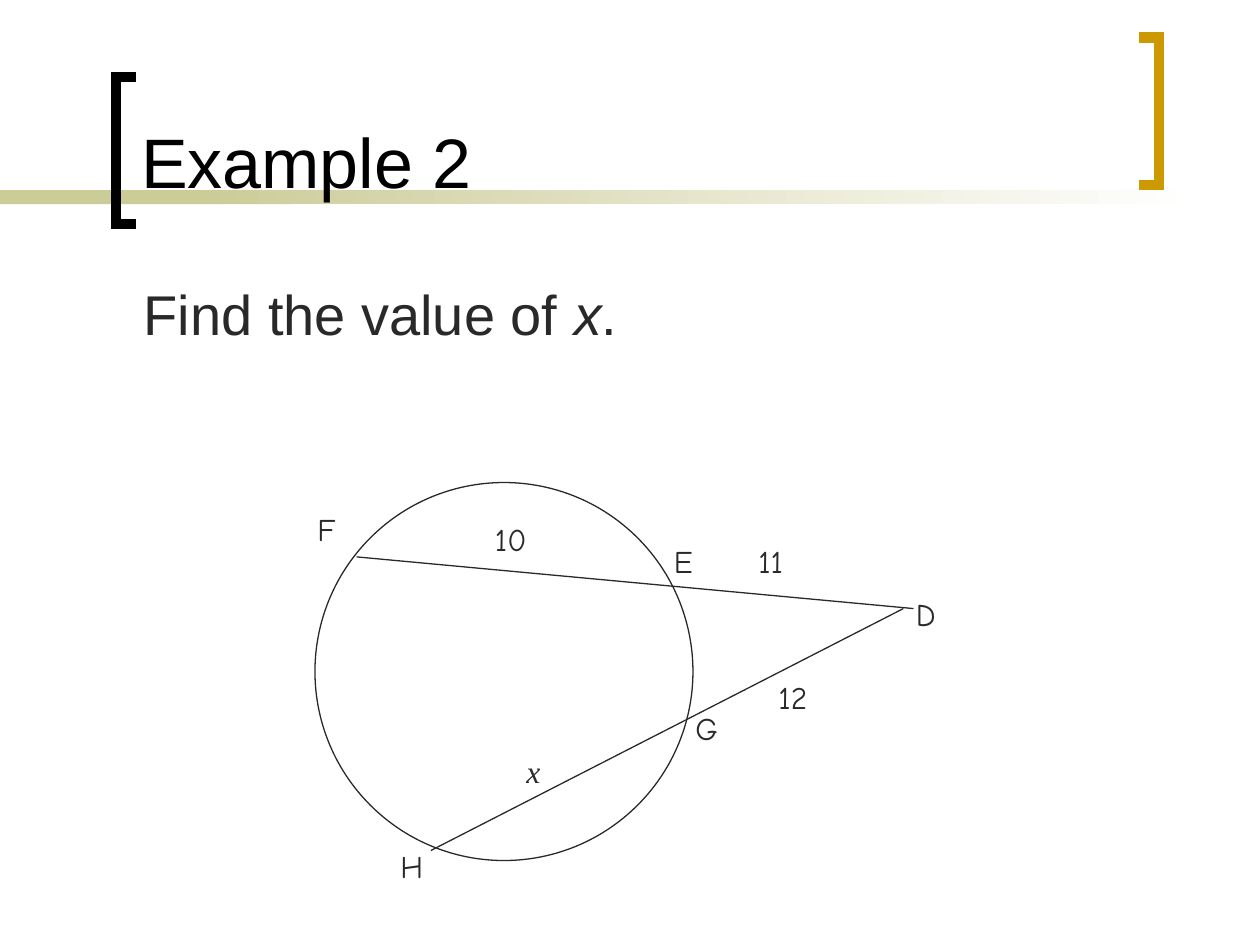
from dataclasses import dataclass

from lxml import etree
from pptx import Presentation
from pptx.dml.color import RGBColor
from pptx.enum import shapes, text
from pptx.oxml import ns
from pptx.util import Inches, Pt


@dataclass(frozen=True)
class Theme:
    ink: RGBColor = RGBColor.from_string("292929")
    black: RGBColor = RGBColor.from_string("000000")
    white: RGBColor = RGBColor.from_string("FFFFFF")
    sage: RGBColor = RGBColor.from_string("CCCC99")
    gold: RGBColor = RGBColor.from_string("CC9900")
    font: str = "Arial"
    label_font: str = "Comic Neue"
    math_font: str = "Times New Roman"
    title_size: int = 40
    body_size: int = 32
    label_size: int = 18
    thin: float = 0.75
    thick: float = 6


THEME = Theme()
BAND_TOP, BAND_HEIGHT = 1.51, 0.11
BRACKET_WIDTH, BRACKET_HEIGHT = 0.16, 1.17
LABEL_WIDTH, LABEL_HEIGHT = 0.67, 0.4

LABELS = [
    ("E", 5.25, 4.25), ("F", 2.42, 4), ("G", 5.42, 5.58),
    ("D", 7.17, 4.67), ("H", 3.08, 6.67),
    ("10", 3.83, 4.08), ("11", 5.92, 4.25), ("12", 6.08, 5.33),
]
SECANTS = [((7.25, 4.83), (2.83, 4.42)), ((3.42, 6.75), (7.17, 4.83))]


def set_all(target, values):
    for name, value in values.items():
        setattr(target, name, value)


def inches(*lengths):
    return [Inches(length) for length in lengths]


def place(shape, left, top, width, height):
    set_all(shape, dict(zip(("left", "top", "width", "height"),
                            inches(left, top, width, height))))


def add_span(para, words, size, color, font=THEME.font, italic=False):
    span = para.add_run()
    span.text = words
    set_all(span.font, {"name": font, "size": Pt(size), "italic": italic})
    span.font.color.rgb = color


def set_line(shape, color, width):
    shape.line.color.rgb = color
    shape.line.width = Pt(width)


def add_band(page, left, width, fade=False):
    band = page.shapes.add_shape(shapes.MSO_SHAPE.RECTANGLE,
                                 *inches(left, BAND_TOP, width, BAND_HEIGHT))
    band.shadow.inherit = False
    band.line.fill.background()
    if fade:
        band.fill.gradient()
        band.fill.gradient_angle = 0
        for stop, color in zip(band.fill.gradient_stops, (THEME.sage, THEME.white)):
            stop.color.rgb = color
    else:
        band.fill.solid()
        band.fill.fore_color.rgb = THEME.sage


def add_bracket(page, spine, tip, top, color):
    """Draw a square bracket with its upright at spine and its ends at tip."""
    bottom = top + BRACKET_HEIGHT
    builder = page.shapes.build_freeform(*inches(tip, top), scale=1.0)
    corners = [(spine, top), (spine, bottom), (tip, bottom)]
    builder.add_line_segments([inches(*corner) for corner in corners], close=False)
    bracket = builder.convert_to_shape()
    bracket.shadow.inherit = False
    bracket.fill.background()
    set_line(bracket, color, THEME.thick)
    miter = etree.SubElement(bracket.line._get_or_add_ln(), ns.qn("a:miter"))
    miter.set("lim", "800000")


def add_circle(page, left, top, diameter):
    circle = page.shapes.add_shape(shapes.MSO_SHAPE.OVAL,
                                   *inches(left, top, diameter, diameter))
    circle.shadow.inherit = False
    circle.fill.background()
    set_line(circle, THEME.ink, THEME.thin)


def add_secant(page, start, end):
    secant = page.shapes.add_connector(shapes.MSO_CONNECTOR.STRAIGHT,
                                       *inches(*start, *end))
    set_line(secant, THEME.ink, THEME.thin)
    etree.SubElement(secant._element.spPr, ns.qn("a:effectLst"))


def add_label(page, words, left, top, font=THEME.label_font, italic=False):
    box = page.shapes.add_textbox(*inches(left, top, LABEL_WIDTH, LABEL_HEIGHT))
    set_all(box.text_frame, {"word_wrap": True,
                             "auto_size": text.MSO_AUTO_SIZE.SHAPE_TO_FIT_TEXT})
    add_span(box.text_frame.paragraphs[0], words, THEME.label_size,
             THEME.ink, font, italic)


def fill_placeholder(page, holder, bounds, anchor):
    """Move a placeholder in front of the decor and return its paragraph."""
    page.shapes._spTree.append(holder._element)
    place(holder, *bounds)
    set_all(holder.text_frame, {"vertical_anchor": anchor, "word_wrap": True,
                                "auto_size": text.MSO_AUTO_SIZE.NONE})
    para = holder.text_frame.paragraphs[0]
    para.alignment = text.PP_ALIGN.LEFT
    return para


def add_title(page):
    para = fill_placeholder(page, page.shapes.title, (1.02, 0.11, 7.83, 1.55),
                            text.MSO_ANCHOR.BOTTOM)
    add_span(para, "Example 2", THEME.title_size, THEME.black)


def add_body(page):
    para = fill_placeholder(page, page.placeholders[1], (1.04, 2.17, 8.38, 4.5),
                            text.MSO_ANCHOR.TOP)
    props = para._p.get_or_add_pPr()
    props.set("marL", str(Inches(0.49)))
    props.set("indent", str(Inches(-0.49)))
    etree.SubElement(props, ns.qn("a:buNone"))
    for words, italic in (("Find the value of ", False), ("x", True), (".", False)):
        add_span(para, words, THEME.body_size, THEME.ink, italic=italic)


def main():
    deck = Presentation()
    set_all(deck, {"slide_width": Inches(10), "slide_height": Inches(7.5)})
    page = deck.slides.add_slide(deck.slide_layouts[1])
    add_band(page, 0, 2.33)
    add_band(page, 1.58, 7.92, fade=True)
    add_bracket(page, 0.92, 0.92 + BRACKET_WIDTH, 0.61, THEME.black)
    add_bracket(page, 9.2, 9.2 - BRACKET_WIDTH, 0.3, THEME.gold)
    add_title(page)
    add_body(page)
    add_circle(page, 2.5, 3.83, 3)
    for start, end in SECANTS:
        add_secant(page, start, end)
    for words, left, top in LABELS:
        add_label(page, words, left, top)
    add_label(page, "x", 4.08, 5.92, THEME.math_font, italic=True)
    deck.save("out.pptx")


if __name__ == "__main__":
    main()
